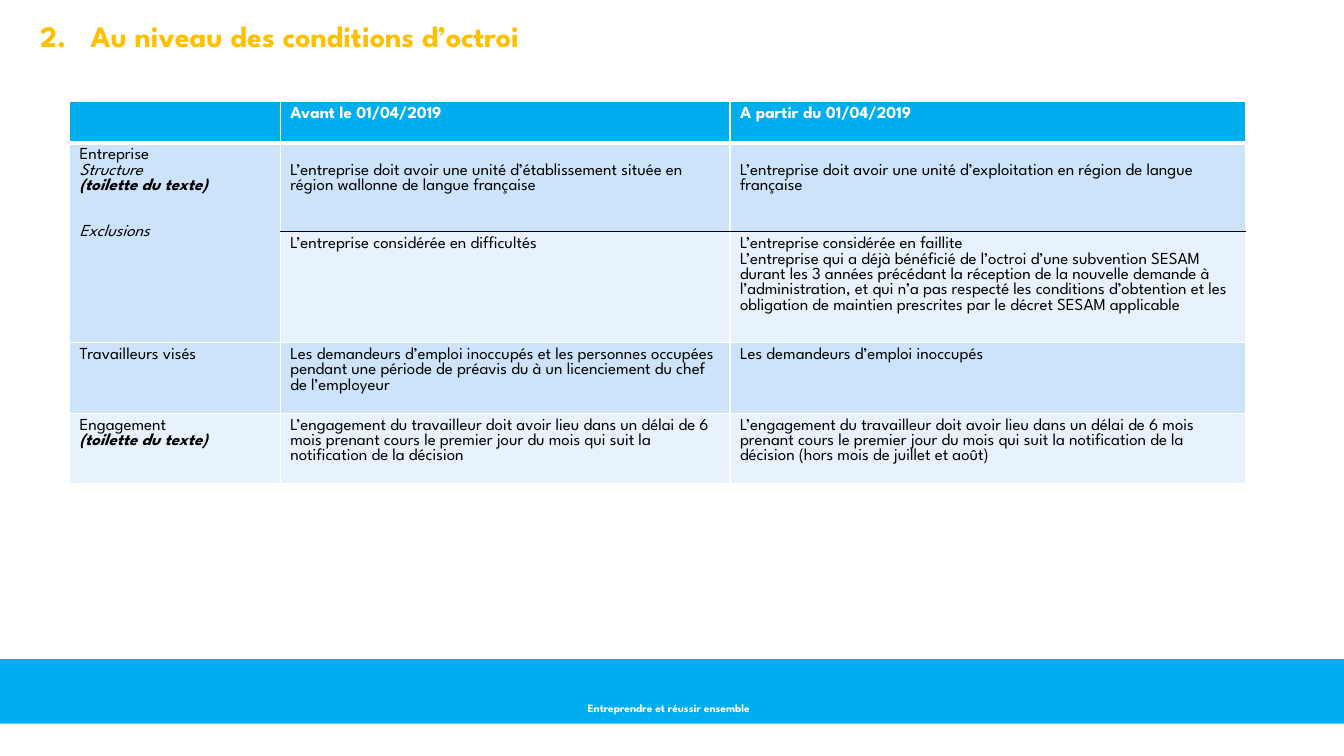
from dataclasses import dataclass

import pptx
import pptx.dml.color
import pptx.enum.shapes
import pptx.enum.text
import pptx.oxml
import pptx.oxml.ns
import pptx.util
from pptx.dml.color import RGBColor
from pptx.util import Inches

FONT = "League Spartan"
BLUE = RGBColor(0x00, 0xAE, 0xEF)
GOLD = RGBColor(0xFF, 0xC0, 0x00)
DARK_BAND = RGBColor(0xCC, 0xE3, 0xF9)
LIGHT_BAND = RGBColor(0xE7, 0xF2, 0xFC)
WHITE = RGBColor(0xFF, 0xFF, 0xFF)
BLACK = RGBColor(0x00, 0x00, 0x00)


@dataclass(frozen=True)
class Line:
    text: str
    bold: bool = False
    italic: bool = False
    gap: float = 0


@dataclass(frozen=True)
class Entry:
    lines: tuple[Line, ...] = ()
    top_margin: float = 0.05


@dataclass(frozen=True)
class Row:
    height: float
    fill: RGBColor
    entries: tuple[Entry, ...]
    color: RGBColor = BLACK


def entry(text: str, bold: bool = False, top_margin: float = 0.05) -> Entry:
    return Entry((Line(text, bold),), top_margin)


CLEANUP = Line("(toilette du texte)", bold=True, italic=True)
COLUMN_WIDTHS = (2.09, 4.46, 5.11)
ROWS = (
    Row(0.41, BLUE, (
        Entry(),
        entry("Avant le 01/04/2019", bold=True),
        entry("A partir du 01/04/2019", bold=True),
    ), WHITE),
    Row(0.88, DARK_BAND, (
        Entry((
            Line("Entreprise"),
            Line("Structure", italic=True),
            CLEANUP,
            Line("Exclusions", italic=True, gap=22),
        )),
        entry("L’entreprise doit avoir une unité d’établissement située en "
              "région wallonne de langue française", top_margin=0.2),
        entry("L’entreprise doit avoir une unité d’exploitation en région de "
              "langue française", top_margin=0.2),
    )),
    Row(1.02, LIGHT_BAND, (
        Entry(),
        entry("L’entreprise considérée en difficultés"),
        Entry((
            Line("L’entreprise considérée en faillite"),
            Line("L’entreprise qui a déjà bénéficié de l’octroi d’une subvention "
                 "SESAM durant les 3 années précédant la réception de la nouvelle "
                 "demande à l’administration, et qui n’a pas respecté les "
                 "conditions d’obtention et les obligation de maintien prescrites "
                 "par le décret SESAM applicable"),
        )),
    )),
    Row(0.56, DARK_BAND, (
        entry("Travailleurs visés"),
        entry("Les demandeurs d’emploi inoccupés et les personnes occupées pendant "
              "une période de préavis du à un licenciement du chef de l’employeur"),
        entry("Les demandeurs d’emploi inoccupés"),
    )),
    Row(0.56, LIGHT_BAND, (
        Entry((Line("Engagement"), CLEANUP)),
        entry("L’engagement du travailleur doit avoir lieu dans un délai de 6 mois "
              "prenant cours le premier jour du mois qui suit la notification de "
              "la décision"),
        entry("L’engagement du travailleur doit avoir lieu dans un délai de 6 mois "
              "prenant cours le premier jour du mois qui suit la notification de "
              "la décision (hors mois de juillet et août)"),
    )),
)


def write_line(para: pptx.text.text._Paragraph, line: Line, size: float,
               color: RGBColor) -> None:
    para.text = line.text
    if line.gap:
        para.space_before = pptx.util.Pt(line.gap)
    for span in para.runs:
        span.font.name = FONT
        span.font.size = pptx.util.Pt(size)
        span.font.bold = line.bold
        span.font.italic = line.italic
        span.font.color.rgb = color


def add_border(cell: pptx.table._Cell, side: str, color: RGBColor,
               width: float) -> None:
    namespace = pptx.oxml.ns.nsdecls("a")
    cell._tc.get_or_add_tcPr().append(pptx.oxml.parse_xml(
        f'<a:ln{side} {namespace} w="{pptx.util.Pt(width)}"><a:solidFill>'
        f'<a:srgbClr val="{color}"/></a:solidFill></a:ln{side}>'))


def border_style(row: int, column: int, side: str) -> tuple[RGBColor, float]:
    edge = row + 1 if side == "B" else row if side == "T" else None
    if edge == 1:
        return WHITE, 3
    if edge == 2 and column > 0:
        return BLACK, 1
    return WHITE, 1


def add_conditions_table(page: pptx.slide.Slide) -> None:
    table = page.shapes.add_table(
        len(ROWS), len(COLUMN_WIDTHS), Inches(0.69), Inches(1.01),
        Inches(sum(COLUMN_WIDTHS)), Inches(sum(row.height for row in ROWS))).table
    table.first_row = False
    table.horz_banding = False
    for column, width in zip(table.columns, COLUMN_WIDTHS):
        column.width = Inches(width)
    for row_index, row in enumerate(ROWS):
        table.rows[row_index].height = Inches(row.height)
        for column_index, content in enumerate(row.entries):
            cell = table.cell(row_index, column_index)
            for side in "LRTB":
                add_border(cell, side, *border_style(row_index, column_index, side))
            cell.fill.solid()
            cell.fill.fore_color.rgb = row.fill
            cell.margin_top = Inches(content.top_margin)
            frame = cell.text_frame
            for position, line in enumerate(content.lines):
                para = frame.add_paragraph() if position else frame.paragraphs[0]
                write_line(para, line, 12, row.color)
    table.cell(1, 0).merge(table.cell(2, 0))


def add_text(page: pptx.slide.Slide, left: float, top: float, width: float,
             height: float, text: str, size: float,
             color: RGBColor) -> pptx.text.text._Paragraph:
    box = page.shapes.add_textbox(
        Inches(left), Inches(top), Inches(width), Inches(height))
    box.text_frame.word_wrap = True
    para = box.text_frame.paragraphs[0]
    write_line(para, Line(text, bold=True), size, color)
    return para


def add_title(page: pptx.slide.Slide) -> None:
    para = add_text(page, 0.3, 0.17, 12.77, 6.17,
                    "Au niveau des conditions d’octroi", 21.3, GOLD)
    para.line_spacing = 0.9
    properties = para._p.get_or_add_pPr()
    properties.set("marL", str(Inches(0.5)))
    properties.set("indent", str(Inches(-0.5)))
    namespace = pptx.oxml.ns.nsdecls("a")
    properties.append(pptx.oxml.parse_xml(
        f'<a:buFont {namespace} typeface="{FONT}"/>'))
    properties.append(pptx.oxml.parse_xml(
        f'<a:buAutoNum {namespace} type="arabicPeriod" startAt="2"/>'))


def add_footer(page: pptx.slide.Slide) -> None:
    band = page.shapes.add_shape(
        pptx.enum.shapes.MSO_SHAPE.RECTANGLE,
        Inches(0), Inches(6.54), Inches(13.33), Inches(0.64))
    band.shadow.inherit = False
    band.fill.solid()
    band.fill.fore_color.rgb = BLUE
    band.line.fill.background()
    para = add_text(page, 5.05, 6.91, 3.17, 0.24,
                    "Entreprendre et réussir ensemble", 8, WHITE)
    para.alignment = pptx.enum.text.PP_ALIGN.CENTER


def main() -> None:
    deck = pptx.Presentation()
    deck.slide_width = Inches(13.33)
    deck.slide_height = Inches(7.5)
    page = deck.slides.add_slide(deck.slide_layouts[6])
    add_footer(page)
    add_title(page)
    add_conditions_table(page)
    deck.save("out.pptx")


if __name__ == "__main__":
    main()
